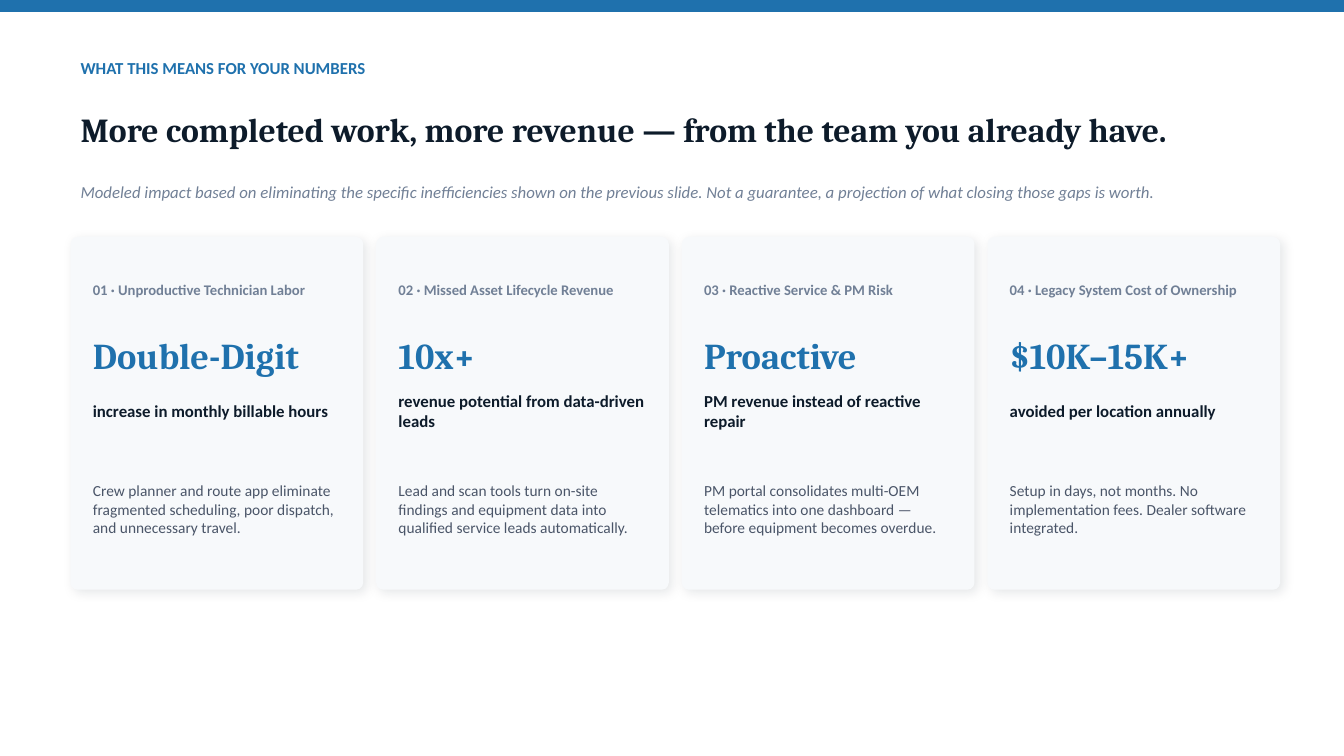
from lxml.etree import fromstring
from pptx import Presentation
from pptx.dml.color import RGBColor
from pptx.enum.shapes import MSO_SHAPE
from pptx.enum.text import MSO_ANCHOR, MSO_AUTO_SIZE, PP_ALIGN
from pptx.util import Cm, Pt

BLUE = RGBColor(0x1F, 0x71, 0xAD)
NAVY = RGBColor(0x0D, 0x1B, 0x2A)
GRAY = RGBColor(0x71, 0x80, 0x96)
SLATE = RGBColor(0x4A, 0x55, 0x68)
CARD_FILL = RGBColor(0xF7, 0xF9, 0xFB)

SLIDE_WIDTH, SLIDE_HEIGHT = 33.86, 19.05
MARGIN = 1.78
CARD_TOP, CARD_WIDTH, CARD_HEIGHT, CARD_PITCH = 5.97, 7.37, 8.89, 7.7
CARD_PADDING = 0.56

CARDS = [
    ("01 · Unproductive Technician Labor", "Double-Digit",
     "increase in monthly billable hours",
     "Crew planner and route app eliminate fragmented scheduling, "
     "poor dispatch, and unnecessary travel."),
    ("02 · Missed Asset Lifecycle Revenue", "10x+",
     "revenue potential from data-driven leads",
     "Lead and scan tools turn on-site findings and equipment data into "
     "qualified service leads automatically."),
    ("03 · Reactive Service & PM Risk", "Proactive",
     "PM revenue instead of reactive repair",
     "PM portal consolidates multi-OEM telematics into one dashboard — "
     "before equipment becomes overdue."),
    ("04 · Legacy System Cost of Ownership", "$10K–15K+",
     "avoided per location annually",
     "Setup in days, not months. No implementation fees. "
     "Dealer software integrated."),
]

# Top offset, height, size, font, colour and bold of each line in a card
CARD_ROWS = [
    (0.64, 1.4, 10.5, "Calibri", GRAY, True),
    (2.16, 1.65, 26, "Cambria", BLUE, True),
    (3.68, 1.4, 12, "Calibri", NAVY, True),
    (5.21, 3.3, 11, "Calibri", SLATE, False),
]

CARD_SHADOW = (
    '<a:effectLst xmlns:a="http://schemas.openxmlformats.org/drawingml/2006/main">'
    f'<a:outerShdw blurRad="{Pt(8)}" dist="{Pt(3)}" dir="2700000" '
    'algn="bl" rotWithShape="0">'
    f'<a:srgbClr val="{NAVY}"><a:alpha val="10000"/></a:srgbClr>'
    '</a:outerShdw></a:effectLst>'
)


def write_text(shape, text, size, font_name, color, bold=False, italic=False,
               inset=(0, 0)):
    frame = shape.text_frame
    frame.text = text
    frame.word_wrap = True
    frame.auto_size = MSO_AUTO_SIZE.NONE
    frame.vertical_anchor = MSO_ANCHOR.MIDDLE
    frame.margin_left = frame.margin_right = Cm(inset[0])
    frame.margin_top = frame.margin_bottom = Cm(inset[1])
    paragraph = frame.paragraphs[0]
    paragraph.alignment = PP_ALIGN.LEFT
    font = paragraph.font
    font.size, font.name = Pt(size), font_name
    font.bold, font.italic = bold, italic
    font.color.rgb = color


def add_text(slide, left, top, width, height, *text_and_style, **options):
    box = slide.shapes.add_textbox(Cm(left), Cm(top), Cm(width), Cm(height))
    write_text(box, *text_and_style, **options)


def add_top_bar(slide, width, height):
    bar = slide.shapes.add_shape(MSO_SHAPE.RECTANGLE, 0, 0, Cm(width), Cm(height))
    bar.shadow.inherit = False
    bar.fill.solid()
    bar.fill.fore_color.rgb = BLUE
    bar.line.color.rgb = BLUE
    bar.line.width = Pt(1)


def add_header(slide, left, top):
    inset = (0.25, 0.13)
    # Kicker
    add_text(slide, left, top, 20.32, 0.89, "WHAT THIS MEANS FOR YOUR NUMBERS",
             12, "Calibri", BLUE, bold=True, inset=inset)
    # Title
    title = slide.shapes.title
    title.left, title.top = Cm(left), Cm(top + 0.89)
    title.width, title.height = Cm(30.23), Cm(2.16)
    write_text(title,
               "More completed work, more revenue — from the team you already have.",
               24, "Cambria", NAVY, bold=True, inset=inset)
    # Subtitle
    add_text(slide, left, top + 2.92, 29.21, 1.27,
             "Modeled impact based on eliminating the specific inefficiencies shown "
             "on the previous slide. Not a guarantee, a projection of what closing "
             "those gaps is worth.",
             12, "Calibri", GRAY, italic=True, inset=inset)


def add_card(slide, left, top, width, height, texts):
    # Panel with a soft shadow
    panel = slide.shapes.add_shape(MSO_SHAPE.ROUNDED_RECTANGLE,
                                   Cm(left), Cm(top), Cm(width), Cm(height))
    panel.adjustments[0] = 0.024
    panel.fill.solid()
    panel.fill.fore_color.rgb = CARD_FILL
    panel.line.fill.background()
    panel.element.spPr.append(fromstring(CARD_SHADOW))
    # Label, figure, outcome and explanation
    for text, (offset, row_height, *style) in zip(texts, CARD_ROWS):
        add_text(slide, left + CARD_PADDING, top + offset,
                 width - 2 * CARD_PADDING, row_height, text, *style)


def main():
    presentation = Presentation()
    presentation.slide_width = Cm(SLIDE_WIDTH)
    presentation.slide_height = Cm(SLIDE_HEIGHT)
    slide = presentation.slides.add_slide(presentation.slide_layouts[5])

    add_header(slide, MARGIN, 1.27)
    for index, texts in enumerate(CARDS):
        add_card(slide, MARGIN + index * CARD_PITCH, CARD_TOP,
                 CARD_WIDTH, CARD_HEIGHT, texts)
    add_top_bar(slide, SLIDE_WIDTH, 0.28)

    presentation.save("out.pptx")


if __name__ == "__main__":
    main()
